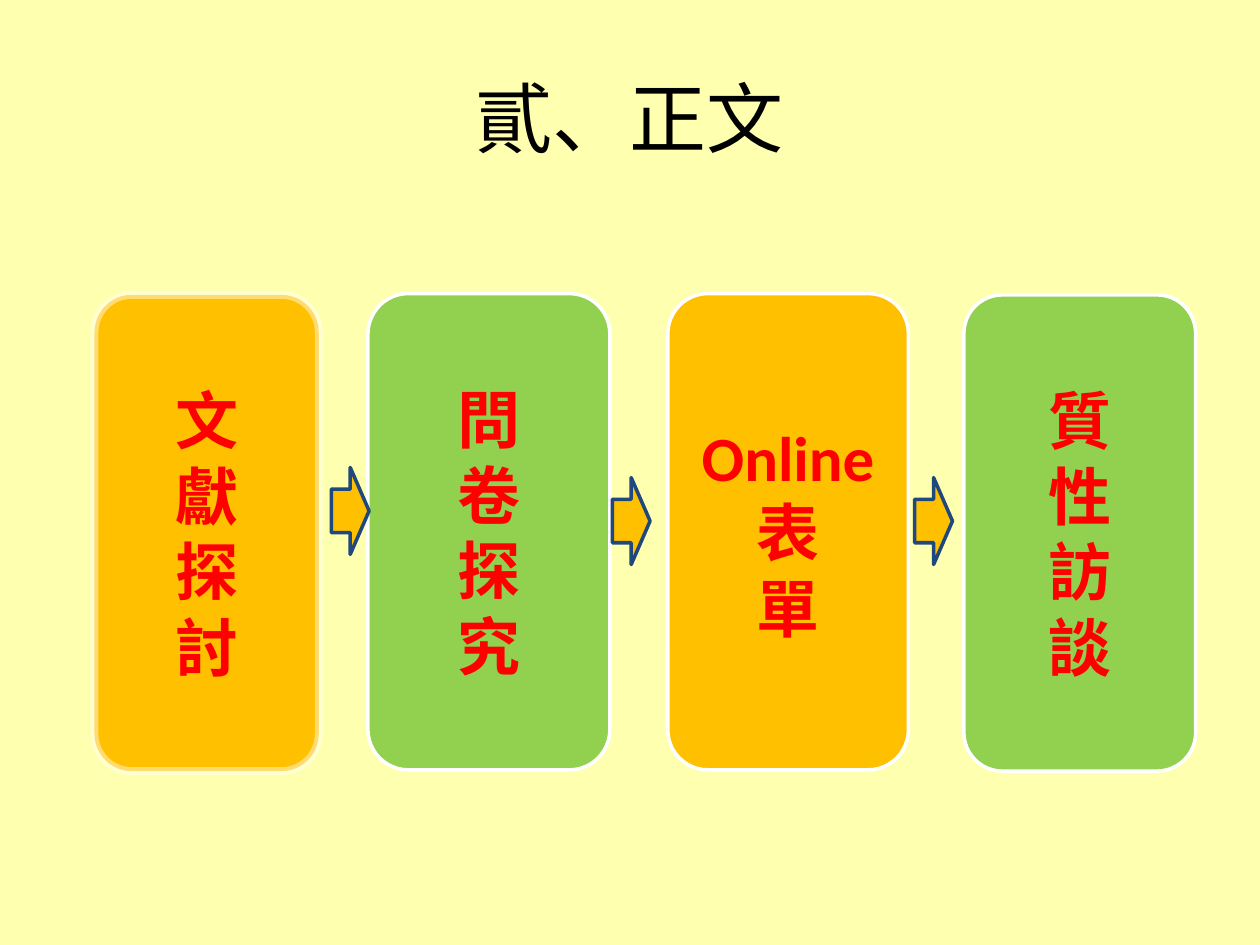
from lxml import etree
from pptx import Presentation
from pptx import util as u
from pptx.dml.color import RGBColor
from pptx.enum import shapes, text
from pptx.oxml.ns import qn

COLORS = {
    "background": "FFFFB0",
    "orange": "FFC000",
    "green": "92D050",
    "white": "FFFFFF",
    "navy": "1F497D",
    "red": "FF0000",
    "black": "000000",
}


class SlideBuilder:
    """Holds the style and the current slide."""

    font = "Calibri"

    def __init__(self, s):
        self.s = s

    def color(self, name):
        return RGBColor.from_string(COLORS[name])

    def background(self, name):
        fill = self.s.background.fill
        fill.solid()
        fill.fore_color.rgb = self.color(name)

    def set_text(self, sp, lines, size, color, bold=False):
        tf = sp.text_frame
        tf.word_wrap = True
        tf.vertical_anchor = text.MSO_ANCHOR.MIDDLE
        tf.text = "\n".join(lines)
        for p in tf.paragraphs:
            p.alignment = text.PP_ALIGN.CENTER
            p.font.name = self.font
            p.font.size = u.Pt(size)
            p.font.bold = bold
            p.font.color.rgb = self.color(color)

    def title(self, words, *box):
        sp = self.s.shapes.add_textbox(*map(u.Inches, box))
        self.set_text(sp, [words], 44, "black")

    def shape(self, kind, box, fill, line, width=2):
        sp = self.s.shapes.add_shape(kind, *map(u.Inches, box))
        sp.shadow.inherit = False
        sp.fill.solid()
        sp.fill.fore_color.rgb = self.color(fill)
        sp.line.color.rgb = self.color(line)
        sp.line.width = u.Pt(width)
        return sp

    def card(self, lines, box, fill, width=2, opacity=None):
        sp = self.shape(shapes.MSO_SHAPE.ROUNDED_RECTANGLE, box, fill, "white", width)
        if opacity is not None:
            rgb = sp.element.spPr.find(qn("a:ln")).find(".//" + qn("a:srgbClr"))
            etree.SubElement(rgb, qn("a:alpha"), val=str(opacity * 1000))
        self.set_text(sp, lines, 36, "red", bold=True)

    def arrow(self, left, top):
        self.shape(shapes.MSO_SHAPE.RIGHT_ARROW, (left, top, 0.3, 0.69), "orange", "navy")


def main():
    prs = Presentation()
    prs.slide_width, prs.slide_height = u.Inches(10), u.Inches(7.5)
    page = SlideBuilder(prs.slides.add_slide(prs.slide_layouts[6]))

    # Background and title
    page.background("background")
    page.title("貳、正文", 0.5, 0.3, 9, 1.25)

    # Research steps; the first has a thick translucent border
    top, height = 2.33, 3.78
    page.card("文獻探討", (0.75, top + 0.01, 1.78, height), "orange", 4.5, 44)
    page.card("問卷探究", (2.92, top, 1.92, height), "green")
    page.card(["Online", "表", "單"], (5.3, top, 1.91, height), "orange")
    page.card("質性訪談", (7.65, top + 0.01, 1.84, height), "green")

    # Arrows between the steps
    for left, arrow_top in ((2.63, 3.71), (4.86, 3.79), (7.26, 3.79)):
        page.arrow(left, arrow_top)

    prs.save("out.pptx")


if __name__ == "__main__":
    main()
